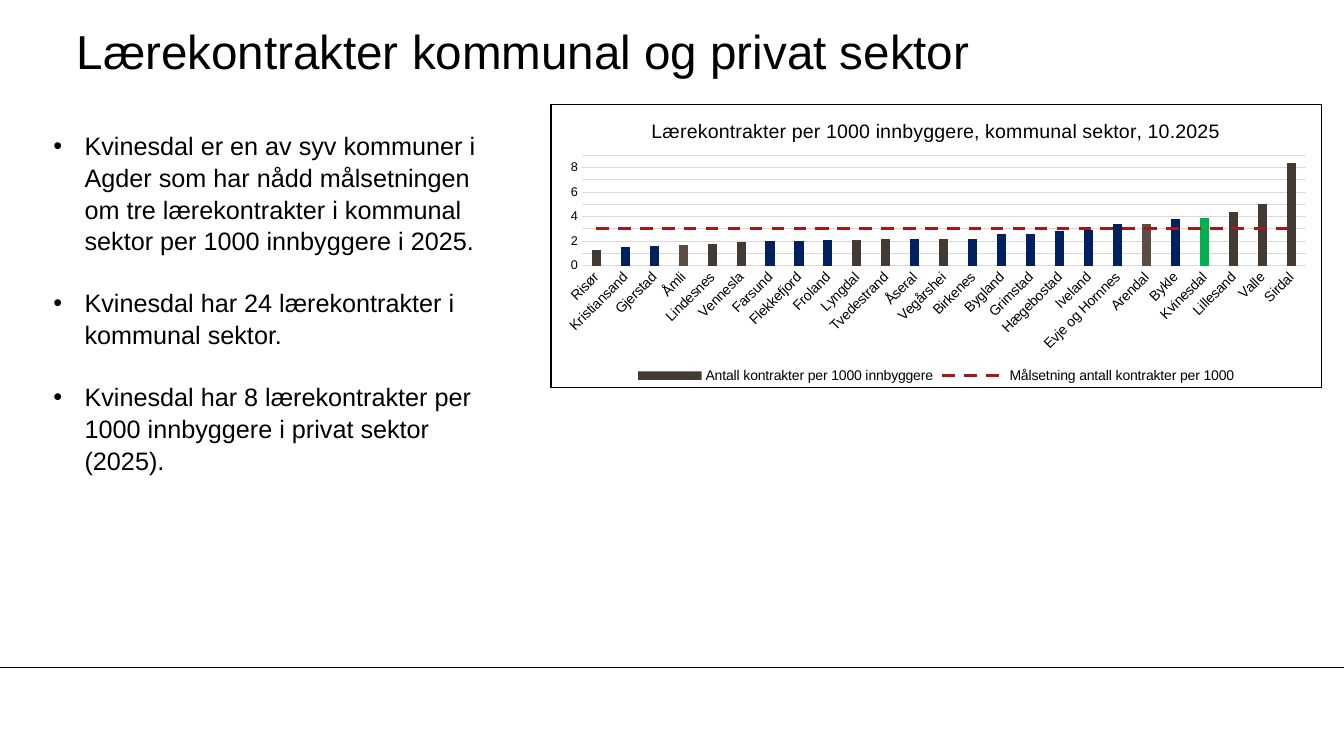
from lxml.etree import SubElement
from pptx import Presentation
from pptx.chart.data import CategoryChartData
from pptx.dml.color import RGBColor
from pptx.enum.chart import XL_CHART_TYPE as ChartType, XL_LEGEND_POSITION as LegendPosition
from pptx.enum.chart import XL_MARKER_STYLE as MarkerStyle, XL_TICK_MARK as TickMark
from pptx.enum.dml import MSO_LINE as Dash
from pptx.enum.shapes import MSO_CONNECTOR as Connector
from pptx.enum.text import MSO_ANCHOR as Anchor, PP_ALIGN as Align
from pptx.oxml import parse_xml
from pptx.oxml.ns import nsdecls, qn
from pptx.util import Inches, Pt

COLOURS = {"black": "000000", "grid": "D9D9D9", "brown": "443A34", "light_brown": "5B4D46",
           "navy": "002060", "green": "00B050", "red": "A71716"}
HIGHLIGHTS = {
    "navy": ["Kristiansand", "Gjerstad", "Farsund", "Flekkefjord", "Froland", "Åseral", "Birkenes",
             "Bygland", "Grimstad", "Hægebostad", "Iveland", "Evje og Hornnes", "Bykle"],
    "light_brown": ["Åmli", "Arendal"],
    "green": ["Kvinesdal"],
}
CONTRACTS = {
    "Risør": 1.3, "Kristiansand": 1.5, "Gjerstad": 1.6, "Åmli": 1.7, "Lindesnes": 1.8,
    "Vennesla": 1.9, "Farsund": 2, "Flekkefjord": 2, "Froland": 2.1, "Lyngdal": 2.1,
    "Tvedestrand": 2.2, "Åseral": 2.2, "Vegårshei": 2.2, "Birkenes": 2.2, "Bygland": 2.6,
    "Grimstad": 2.6, "Hægebostad": 2.8, "Iveland": 2.9, "Evje og Hornnes": 3.4, "Arendal": 3.4,
    "Bykle": 3.8, "Kvinesdal": 3.9, "Lillesand": 4.4, "Valle": 5, "Sirdal": 8.4,
}
TARGET = 3
FINDINGS = [
    "Kvinesdal er en av syv kommuner i Agder som har nådd målsetningen om tre lærekontrakter "
    "i kommunal sektor per 1000 innbyggere i 2025.",
    "Kvinesdal har 24 lærekontrakter i kommunal sektor.",
    "Kvinesdal har 8 lærekontrakter per 1000 innbyggere i privat sektor (2025).",
]


class Deck:
    font_name = "Arial"

    def __init__(self, width, height):
        self.presentation = Presentation()
        self.presentation.slide_width = Inches(width)
        self.presentation.slide_height = Inches(height)
        self.column = self.presentation.slide_width / 100
        self.row = self.presentation.slide_height / 100
        self.slide = self.presentation.slides.add_slide(self.presentation.slide_layouts[5])

    def area(self, left, top, width, height):
        return (round(left * self.column), round(top * self.row),
                round(width * self.column), round(height * self.row))

    def colour(self, name):
        return RGBColor.from_string(COLOURS[name])

    def style(self, font, size):
        font.name = self.font_name
        font.size = Pt(size)
        font.bold = False
        font.color.rgb = self.colour("black")

    def stroke(self, line, colour, width=0.75):
        line.color.rgb = self.colour(colour)
        line.width = Pt(width)

    def title(self, text, *place):
        heading = self.slide.shapes.title
        heading.left, heading.top, heading.width, heading.height = self.area(*place)
        frame = heading.text_frame
        frame.text = text
        frame.vertical_anchor = Anchor.MIDDLE
        frame.margin_left = frame.margin_right = frame.margin_top = frame.margin_bottom = 0
        frame.paragraphs[0].alignment = Align.LEFT
        self.style(frame.paragraphs[0].font, 34)

    def bullets(self, texts, *place):
        frame = self.slide.shapes.add_textbox(*self.area(*place)).text_frame
        frame.word_wrap = True
        for number, text in enumerate(texts):
            paragraph = frame.add_paragraph() if number else frame.paragraphs[0]
            paragraph.text = text
            paragraph.line_spacing = 1.05
            if number:
                paragraph.space_before = Pt(21.7)
            properties = paragraph._p.get_or_add_pPr()
            properties.set("marL", str(Inches(0.31)))
            properties.set("indent", str(-Inches(0.31)))
            SubElement(properties, qn("a:buFont")).set("typeface", self.font_name)
            SubElement(properties, qn("a:buChar")).set("char", "•")
            self.style(paragraph.font, 18)

    def rule(self, top):
        left, level, width, _ = self.area(0, top, 100, 0)
        divider = self.slide.shapes.add_connector(Connector.STRAIGHT, left, level, width, level)
        self.stroke(divider.line, "black")
        SubElement(divider._element.spPr, qn("a:effectLst"))

    def chart(self, title, bar_name, line_name, values, target, highlights, *place):
        data = CategoryChartData()
        data.categories = list(values)
        data.add_series(bar_name, list(values.values()))
        data.add_series(line_name, [target] * len(values))
        chart = self.slide.shapes.add_chart(
            ChartType.COLUMN_CLUSTERED, *self.area(*place), data).chart
        self.style(chart.font, 10)
        self.frame_chart(chart)

        chart.has_title = True
        chart.chart_title.include_in_layout = False
        heading = chart.chart_title.text_frame.paragraphs[0]
        heading.text = title
        self.style(heading.font, 14)
        chart.has_legend = True
        chart.legend.position = LegendPosition.BOTTOM
        chart.legend.include_in_layout = False
        self.style(chart.legend.font, 10)

        self.axes(chart)
        self.target_line(chart)
        self.columns(chart.plots[0], list(values), highlights)

    def frame_chart(self, chart):
        chart._chartSpace.find(qn("c:txPr")).addprevious(parse_xml(
            f'<c:spPr {nsdecls("c", "a")}><a:noFill/><a:ln w="{Pt(0.75)}"><a:solidFill>'
            f'<a:srgbClr val="{COLOURS["black"]}"/></a:solidFill></a:ln></c:spPr>'))
        plot_area = chart._chartSpace.chart.plotArea
        for layout in plot_area.findall(qn("c:layout")):
            plot_area.remove(layout)
        layout = parse_xml(f'<c:layout {nsdecls("c")}><c:manualLayout/></c:layout>')
        settings = {"layoutTarget": "inner", "xMode": "edge", "yMode": "edge",
                    "x": 0.04, "y": 0.18, "w": 0.94, "h": 0.39}
        for tag, value in settings.items():
            SubElement(layout[0], qn(f"c:{tag}")).set("val", str(value))
        plot_area.insert(0, layout)

    def axes(self, chart):
        municipalities, rate = chart.category_axis, chart.value_axis
        for axis, size in ((municipalities, 10), (rate, 9)):
            axis.major_tick_mark = axis.minor_tick_mark = TickMark.NONE
            self.style(axis.tick_labels.font, size)
        municipalities._element.find(qn("c:txPr")).find(qn("a:bodyPr")).set("rot", "-2700000")
        self.stroke(municipalities.format.line, "grid")
        rate.minimum_scale, rate.maximum_scale, rate.major_unit = 0, 9, 1
        rate.tick_labels.number_format = "0"
        rate.tick_labels.number_format_is_linked = False
        rate.format.line.fill.background()
        self.stroke(rate.major_gridlines.format.line, "grid")

    def target_line(self, chart):
        bars = chart.plots[0]._element
        series = bars.findall(qn("c:ser"))[1]
        for inversion in series.findall(qn("c:invertIfNegative")):
            series.remove(inversion)
        lines = parse_xml(f'<c:lineChart {nsdecls("c")}><c:grouping val="standard"/>'
                          '<c:varyColors val="0"/></c:lineChart>')
        lines.append(series)
        SubElement(lines, qn("c:marker")).set("val", "1")
        for axis in bars.findall(qn("c:axId")):
            SubElement(lines, qn("c:axId")).set("val", axis.get("val"))
        bars.addnext(lines)
        target = chart.plots[1].series[0]
        target.smooth = False
        target.marker.style = MarkerStyle.NONE
        self.stroke(target.format.line, "red", 2.25)
        target.format.line.dash_style = Dash.DASH

    def columns(self, plot, municipalities, highlights):
        plot.gap_width, plot.overlap, plot.vary_by_categories = 219, -27, False
        contracts = plot.series[0]
        contracts.invert_if_negative = False
        self.fill(contracts, "brown")
        for colour, names in highlights.items():
            for name in names:
                self.fill(contracts.points[municipalities.index(name)], colour)

    def fill(self, bar, colour):
        bar.format.fill.solid()
        bar.format.fill.fore_color.rgb = self.colour(colour)


def main():
    deck = Deck(13.33, 7.5)
    deck.rule(88.27)
    deck.title("Lærekontrakter kommunal og privat sektor", 5.7, 1.73, 83.27, 10)
    deck.bullets(FINDINGS, 3.23, 16.4, 35.03, 49.87)
    deck.chart("Lærekontrakter per 1000 innbyggere, kommunal sektor, 10.2025",
               "Antall kontrakter per 1000 innbyggere", "Målsetning antall kontrakter per 1000",
               CONTRACTS, TARGET, HIGHLIGHTS, 40.96, 13.73, 57.39, 37.6)
    deck.presentation.save("out.pptx")


if __name__ == "__main__":
    main()
